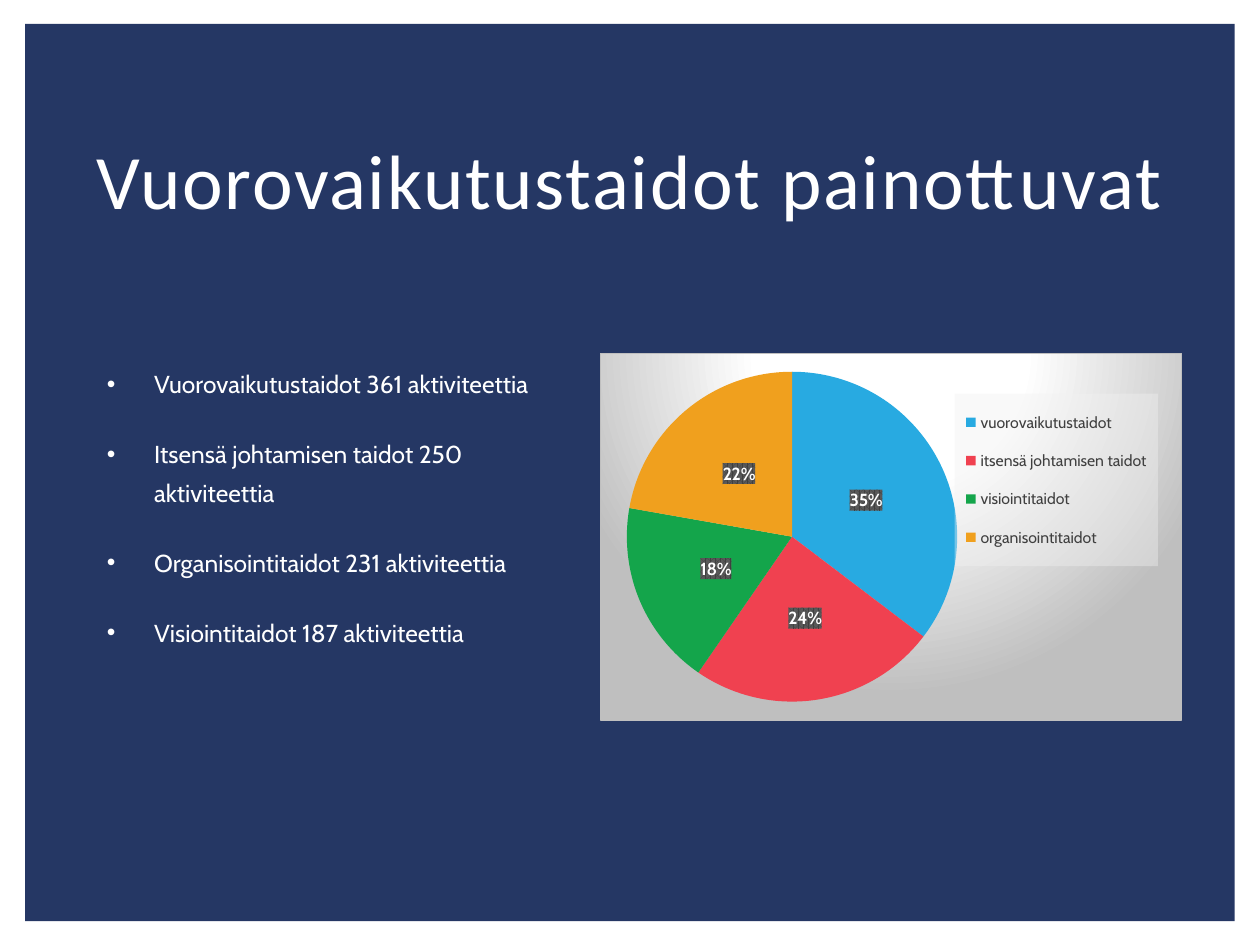
import lxml.etree
import pptx
import pptx.chart.data
import pptx.dml.color
import pptx.enum.chart
import pptx.enum.shapes
import pptx.enum.text
import pptx.oxml
import pptx.oxml.ns
import pptx.util

Inches, Pt = pptx.util.Inches, pptx.util.Pt
qn = pptx.oxml.ns.qn
ALIGN = pptx.enum.text.PP_ALIGN
ANCHOR = pptx.enum.text.MSO_ANCHOR
COLORS = {
    "navy": "253764", "white": "FFFFFF", "silver": "BFBFBF", "pale": "F2F2F2",
    "dark": "404040", "gray": "595959", "black": "000000",
    "blue": "28AAE1", "red": "F04150", "green": "14A54B", "orange": "F0A01E",
}
NS = pptx.oxml.ns.nsdecls("a", "c")


def rgb(name):
    return pptx.dml.color.RGBColor.from_string(COLORS[name])


def color_xml(name, inner=""):
    return f'<a:srgbClr val="{COLORS[name]}">{inner}</a:srgbClr>'


def style_part(part, content):
    """Put a c:spPr with the given fill and line before the text style of a chart part."""
    part.find(qn("c:txPr")).addprevious(
        pptx.oxml.parse_xml(f"<c:spPr {NS}>{content}</c:spPr>"))


def place_part(part, before, x, y, w, h, inner=False):
    """Give a chart part a fixed place, in fractions of the chart."""
    for old in part.findall(qn("c:layout")):
        part.remove(old)
    target = '<c:layoutTarget val="inner"/>' if inner else ""
    sizes = "".join(f'<c:{k} val="{v}"/>' for k, v in zip("xywh", (x, y, w, h)))
    part.find(qn(before)).addprevious(pptx.oxml.parse_xml(
        f'<c:layout {NS}><c:manualLayout>{target}<c:xMode val="edge"/>'
        f'<c:yMode val="edge"/>{sizes}</c:manualLayout></c:layout>'))


class SlideBuilder:
    """Holds the text style and the slide being built."""

    def __init__(self, slide, font="Cabin", color="white"):
        self.slide, self.font, self.color = slide, font, color

    def set_font(self, font, size, color=None, **formats):
        formats = {"name": self.font, "size": Pt(size), **formats}
        for name, value in formats.items():
            setattr(font, name, value)
        font.color.rgb = rgb(color or self.color)

    def panel(self, box, color):
        sp = self.slide.shapes.add_shape(
            pptx.enum.shapes.MSO_SHAPE.RECTANGLE, *map(Inches, box))
        sp.shadow.inherit = False
        sp.fill.solid()
        sp.fill.fore_color.rgb = rgb(color)
        sp.line.fill.background()

    def text(self, box, lines, size, formats, anchor=ANCHOR.TOP, bullet=False,
             spacing=0, **font):
        tf = self.slide.shapes.add_textbox(*map(Inches, box)).text_frame
        tf.word_wrap = True
        tf.vertical_anchor = anchor
        for i, line in enumerate(lines):
            p = tf.paragraphs[0] if i == 0 else tf.add_paragraph()
            if bullet:
                pPr = p._p.get_or_add_pPr()
                pPr.set("marL", str(Pt(27)))
                pPr.set("indent", str(-Pt(27)))
                lxml.etree.SubElement(pPr, qn("a:buFont")).set("typeface", "Arial")
                lxml.etree.SubElement(pPr, qn("a:buChar")).set("char", "•")
            for name, value in formats.items():
                setattr(p, name, value)
            r = p.add_run()
            r.text = line
            self.set_font(r.font, size, **font)
            if spacing:
                r.font._element.set("spc", str(spacing * 100))

    def pie(self, box, slices):
        data = pptx.chart.data.CategoryChartData()
        data.categories = [name for name, _, _ in slices]
        data.add_series("Series 1", [value for _, value, _ in slices])
        chart = self.slide.shapes.add_chart(
            pptx.enum.chart.XL_CHART_TYPE.PIE, *map(Inches, box), data).chart
        chart.has_title = False
        self.set_font(chart.font, 10, "black")
        plot = chart.plots[0]
        plot.vary_by_categories = True
        for i, (_, _, color) in enumerate(slices):
            fill = plot.series[0].points[i].format.fill
            fill.solid()
            fill.fore_color.rgb = rgb(color)

        labels = plot.series[0].data_labels
        formats = {
            "show_percentage": True, "show_value": False,
            "number_format": "0%", "number_format_is_linked": False,
            "position": pptx.enum.chart.XL_LABEL_POSITION.CENTER,
        }
        for name, value in formats.items():
            setattr(labels, name, value)
        self.set_font(labels.font, 10, bold=True)
        style_part(labels._element,
                   f'<a:pattFill prst="pct75"><a:fgClr>{color_xml("dark")}</a:fgClr>'
                   f'<a:bgClr>{color_xml("gray")}</a:bgClr></a:pattFill>')

        chart.has_legend = True
        legend = chart.legend
        legend.position = pptx.enum.chart.XL_LEGEND_POSITION.RIGHT
        legend.include_in_layout = False
        self.set_font(legend.font, 9, "dark")
        alpha = '<a:alpha val="39000"/>'
        style_part(legend._element,
                   f'<a:solidFill>{color_xml("pale", alpha)}</a:solidFill>')

        stops = "".join(f'<a:gs pos="{pos * 1000}">{color_xml(color)}</a:gs>'
                        for pos, color in ((0, "white"), (39, "white"), (100, "silver")))
        style_part(chart._chartSpace,
                   f'<a:gradFill><a:gsLst>{stops}</a:gsLst><a:path path="circle">'
                   '<a:fillToRect l="50000" t="-80000" r="50000" b="180000"/></a:path>'
                   f'</a:gradFill><a:ln w="{Pt(0.75)}"><a:solidFill>'
                   f'{color_xml("silver")}</a:solidFill></a:ln>')
        place_part(legend._element, "c:overlay", 0.61, 0.11, 0.35, 0.47)
        plot_area = chart._chartSpace.chart.plotArea
        place_part(plot_area, "c:pieChart", 0.04, 0.05, 0.58, 0.9, inner=True)


def main():
    prs = pptx.Presentation()
    prs.slide_width, prs.slide_height = Inches(10), Inches(7.5)
    s = SlideBuilder(prs.slides.add_slide(prs.slide_layouts[6]))

    s.panel((0.2, 0.19, 9.6, 7.12), "navy")
    s.text((0.5, 0.75, 9, 1.51), ["Vuorovaikutustaidot painottuvat"], 44,
           {"alignment": ALIGN.CENTER, "line_spacing": Pt(40)},
           anchor=ANCHOR.MIDDLE, spacing=1, name="Calibri")
    s.text((0.75, 2.81, 3.62, 3.07), [
        "Vuorovaikutustaidot 361 aktiviteettia",
        "Itsensä johtamisen taidot 250 aktiviteettia",
        "Organisointitaidot 231 aktiviteettia",
        "Visiointitaidot 187 aktiviteettia",
    ], 14, {"line_spacing": Pt(22), "space_after": Pt(18)}, bullet=True)
    s.pie((4.76, 2.8, 4.62, 2.92), [
        ("vuorovaikutustaidot", 35, "blue"),
        ("itsensä johtamisen taidot", 24, "red"),
        ("visiointitaidot", 18, "green"),
        ("organisointitaidot", 22, "orange"),
    ])
    prs.save("out.pptx")


if __name__ == "__main__":
    main()
